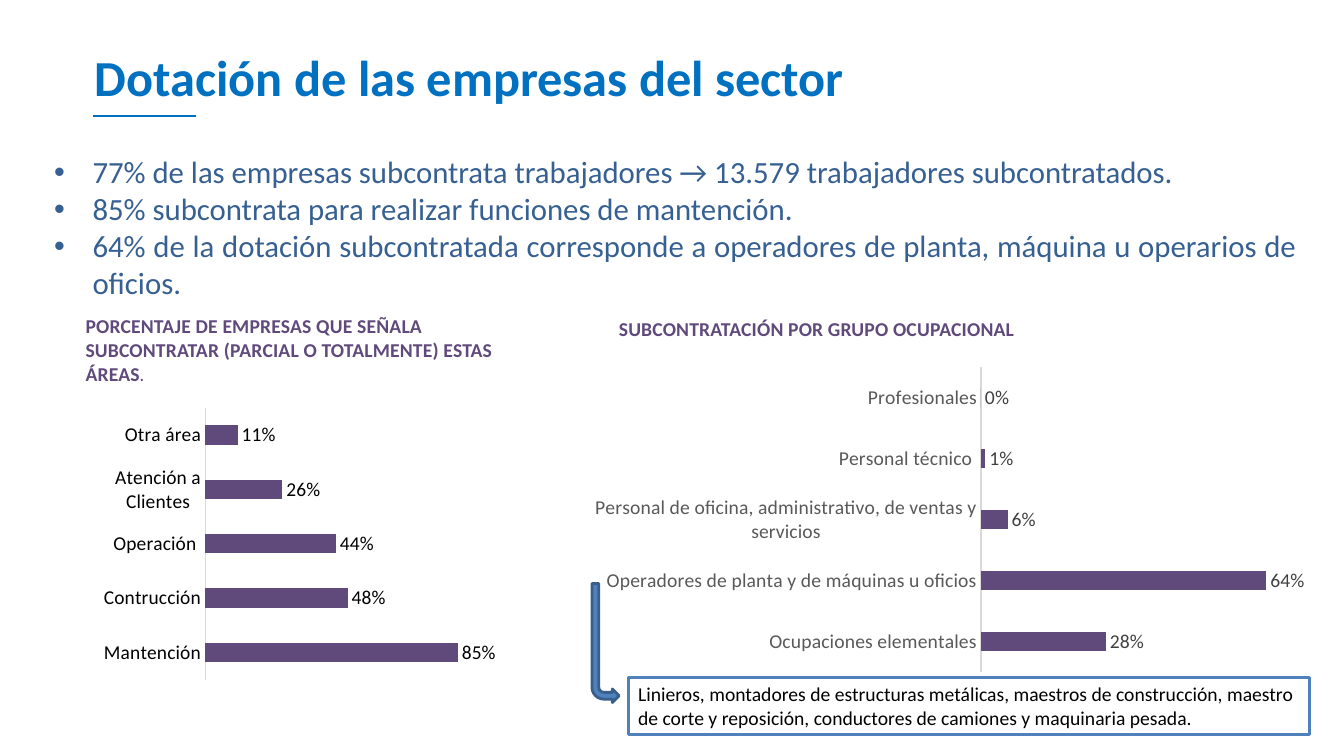
from lxml.etree import SubElement
from pptx import Presentation
from pptx.chart.data import CategoryChartData
from pptx.dml.color import RGBColor
from pptx.enum.chart import XL_CHART_TYPE, XL_LABEL_POSITION, XL_TICK_LABEL_POSITION, XL_TICK_MARK
from pptx.enum.shapes import MSO_CONNECTOR, MSO_SHAPE
from pptx.enum.text import MSO_ANCHOR, MSO_AUTO_SIZE, PP_ALIGN
from pptx.oxml.ns import qn
from pptx.util import Inches, Pt

SLIDE_WIDTH, SLIDE_HEIGHT = Inches(13.33), Inches(7.5)
FONT = "Calibri"
WHITE = RGBColor(0xFF, 0xFF, 0xFF)
BLACK = RGBColor(0x00, 0x00, 0x00)
TITLE_BLUE = RGBColor(0x00, 0x70, 0xC0)
BULLET_BLUE = RGBColor(0x37, 0x60, 0x92)
PURPLE = RGBColor(0x60, 0x4A, 0x7C)
NOTE_BLUE = RGBColor(0x4F, 0x81, 0xBD)
ARROW_EDGE = RGBColor(0x3A, 0x5F, 0x8C)
AXIS_GRAY = RGBColor(0xD9, 0xD9, 0xD9)
CATEGORY_GRAY = RGBColor(0x59, 0x59, 0x59)
LABEL_GRAY = RGBColor(0x40, 0x40, 0x40)

FINDINGS = [
    "77% de las empresas subcontrata trabajadores → 13.579 trabajadores subcontratados.",
    "85% subcontrata para realizar funciones de mantención.",
    "64% de la dotación subcontratada corresponde a operadores de planta, máquina u operarios de oficios.",
]
AREAS = {
    "Mantención": 0.85,
    "Contrucción": 0.48,
    "Operación ": 0.44,
    "Atención a Clientes": 0.26,
    "Otra área": 0.11,
}
OCCUPATIONS = {
    "Profesionales": 0,
    "Personal técnico ": 0.01,
    "Personal de oficina, administrativo, de ventas y servicios": 0.06,
    "Operadores de planta y de máquinas u oficios": 0.64,
    "Ocupaciones elementales": 0.28,
}


def area(left, top, width, height):
    """Turn percentages of the slide's size into lengths."""
    return (int(SLIDE_WIDTH * left / 100), int(SLIDE_HEIGHT * top / 100),
            int(SLIDE_WIDTH * width / 100), int(SLIDE_HEIGHT * height / 100))


def style_font(font, size, color, bold=False):
    """Set the typeface, size, colour and weight of a font."""
    font.name, font.size, font.bold = FONT, Pt(size), bold
    font.color.rgb = color


def add_run(paragraph, text, size, color, bold=False, spacing=0):
    """Add one formatted run, with letter spacing in hundredths of a point."""
    run = paragraph.add_run()
    run.text = text
    style_font(run.font, size, color, bold)
    if spacing:
        run.font._element.set("spc", str(spacing))


def add_title(slide, text):
    """Move and format the title placeholder and underline its start."""
    title = slide.shapes.title
    title.left, title.top, title.width, title.height = area(6.3, 5.47, 57.9, 9.47)
    title.fill.solid()
    title.fill.fore_color.rgb = WHITE
    frame = title.text_frame
    frame.word_wrap = False
    frame.auto_size = MSO_AUTO_SIZE.SHAPE_TO_FIT_TEXT
    frame.vertical_anchor = MSO_ANCHOR.TOP
    frame.paragraphs[0].alignment = PP_ALIGN.LEFT
    add_run(frame.paragraphs[0], text, 36, TITLE_BLUE, bold=True)

    left, top, width, _ = area(6.9, 15.33, 7.65, 0)
    underline = slide.shapes.add_connector(MSO_CONNECTOR.STRAIGHT, left, top, left + width, top)
    underline.line.color.rgb = TITLE_BLUE
    underline.line.width = Pt(1.5)
    SubElement(underline._element.spPr, qn("a:effectLst"))


def add_text_frame(slide, place):
    """Add a wrapping text box and return its frame."""
    frame = slide.shapes.add_textbox(*area(*place)).text_frame
    frame.word_wrap = True
    frame.auto_size = MSO_AUTO_SIZE.SHAPE_TO_FIT_TEXT
    return frame


def add_findings(slide, place, findings):
    """Add the justified bullet list."""
    frame = add_text_frame(slide, place)
    for index, finding in enumerate(findings):
        paragraph = frame.add_paragraph() if index else frame.paragraphs[0]
        paragraph.alignment = PP_ALIGN.JUSTIFY
        properties = paragraph._p.get_or_add_pPr()
        properties.set("marL", str(Inches(0.38)))
        properties.set("indent", str(-Inches(0.38)))
        SubElement(properties, qn("a:buFont"), typeface="Arial")
        SubElement(properties, qn("a:buChar"), char="•")
        add_run(paragraph, finding, 22, BULLET_BLUE)


def add_heading(slide, place, text, ending="", indent=0):
    """Add a chart heading with an optional smaller ending."""
    paragraph = add_text_frame(slide, place).paragraphs[0]
    paragraph._p.get_or_add_pPr().set("marL", str(Inches(indent)))
    add_run(paragraph, text, 14, PURPLE, bold=True, spacing=10)
    if ending:
        add_run(paragraph, ending, 11, PURPLE, bold=True, spacing=10)


def set_plot_area(chart, shares):
    """Fix the inner plot area as shares of the chart's size."""
    plot_area = chart._chartSpace.chart.plotArea
    for old in plot_area.findall(qn("c:layout")):
        plot_area.remove(old)
    layout = SubElement(plot_area, qn("c:layout"))
    plot_area.insert(0, layout)
    manual = SubElement(layout, qn("c:manualLayout"))
    settings = [("layoutTarget", "inner"), ("xMode", "edge"), ("yMode", "edge")]
    for tag, value in settings + list(zip("xywh", shares)):
        SubElement(manual, qn(f"c:{tag}"), val=str(value))


def add_bars(slide, place, shares, values, maximum, gap, category_color, label_color, reverse=False):
    """Add a horizontal percentage bar chart."""
    data = CategoryChartData(number_format="0%")
    data.categories = list(values)
    data.add_series("Series 1", list(values.values()))
    chart = slide.shapes.add_chart(XL_CHART_TYPE.BAR_CLUSTERED, *area(*place), data).chart
    chart.has_legend = chart.has_title = False
    style_font(chart.font, 14, BLACK)

    categories = chart.category_axis
    categories.reverse_order = reverse
    categories.has_major_gridlines = False
    categories.major_tick_mark = categories.minor_tick_mark = XL_TICK_MARK.NONE
    categories.tick_label_position = XL_TICK_LABEL_POSITION.NEXT_TO_AXIS
    categories.format.line.color.rgb = AXIS_GRAY
    categories.format.line.width = Pt(0.75)
    style_font(categories.tick_labels.font, 14, category_color)

    scale = chart.value_axis
    scale.minimum_scale, scale.maximum_scale = 0, maximum
    scale.has_major_gridlines = scale.visible = False

    plot = chart.plots[0]
    plot.gap_width = gap
    plot.vary_by_categories = False
    bars = plot.series[0]
    bars.format.fill.solid()
    bars.format.fill.fore_color.rgb = PURPLE
    labels = bars.data_labels
    labels.show_value = True
    labels.number_format, labels.number_format_is_linked = "0%", False
    labels.position = XL_LABEL_POSITION.OUTSIDE_END
    style_font(labels.font, 14, label_color)
    set_plot_area(chart, shares)


def add_filled_shape(slide, kind, place, fill, edge):
    """Add a preset shape with a fill and a two-point outline."""
    shape = slide.shapes.add_shape(kind, *area(*place))
    shape.shadow.inherit = False
    shape.fill.solid()
    shape.fill.fore_color.rgb = fill
    shape.line.color.rgb = edge
    shape.line.width = Pt(2)
    return shape


def add_note(slide, place, text):
    """Add the outlined note."""
    frame = add_filled_shape(slide, MSO_SHAPE.RECTANGLE, place, WHITE, NOTE_BLUE).text_frame
    frame.word_wrap = True
    frame.auto_size = MSO_AUTO_SIZE.SHAPE_TO_FIT_TEXT
    frame.vertical_anchor = MSO_ANCHOR.TOP
    frame.paragraphs[0].alignment = PP_ALIGN.LEFT
    add_run(frame.paragraphs[0], text, 14, BLACK)


def main():
    """Build the slide and save it."""
    deck = Presentation()
    deck.slide_width, deck.slide_height = SLIDE_WIDTH, SLIDE_HEIGHT
    slide = deck.slides.add_slide(deck.slide_layouts[5])
    add_title(slide, "Dotación de las empresas del sector")
    add_findings(slide, (3.3, 19.6, 93.92, 21.07), FINDINGS)
    add_heading(slide, (45.31, 41.2, 37.81, 4.53), "SUBCONTRATACIÓN POR GRUPO OCUPACIONAL")
    add_bars(slide, (43.29, 47.73, 54.01, 42), (0.55, 0.02, 0.43, 0.96), OCCUPATIONS,
             0.7, 219, CATEGORY_GRAY, LABEL_GRAY, reverse=True)
    add_bars(slide, (7.35, 53.2, 29.56, 37.47), (0.27, 0.02, 0.68, 0.96), AREAS,
             0.9, 182, BLACK, BLACK)
    add_heading(slide, (5.18, 40.93, 36.83, 10.8),
                "PORCENTAJE DE EMPRESAS QUE SEÑALA SUBCONTRATAR (PARCIAL O TOTALMENTE) ESTAS ÁREAS",
                ending=".", indent=0.06)
    add_note(slide, (46.74, 89.6, 50.71, 7.6),
             "Linieros, montadores de estructuras metálicas, maestros de construcción, "
             "maestro de corte y reposición, conductores de camiones y maquinaria pesada.")
    arrow = add_filled_shape(slide, MSO_SHAPE.BENT_ARROW, (44.04, 77.2, 2.03, 15.73), NOTE_BLUE, ARROW_EDGE)
    arrow.rotation = 180
    arrow._element.spPr.xfrm.set("flipH", "1")
    deck.save("out.pptx")


if __name__ == "__main__":
    main()
